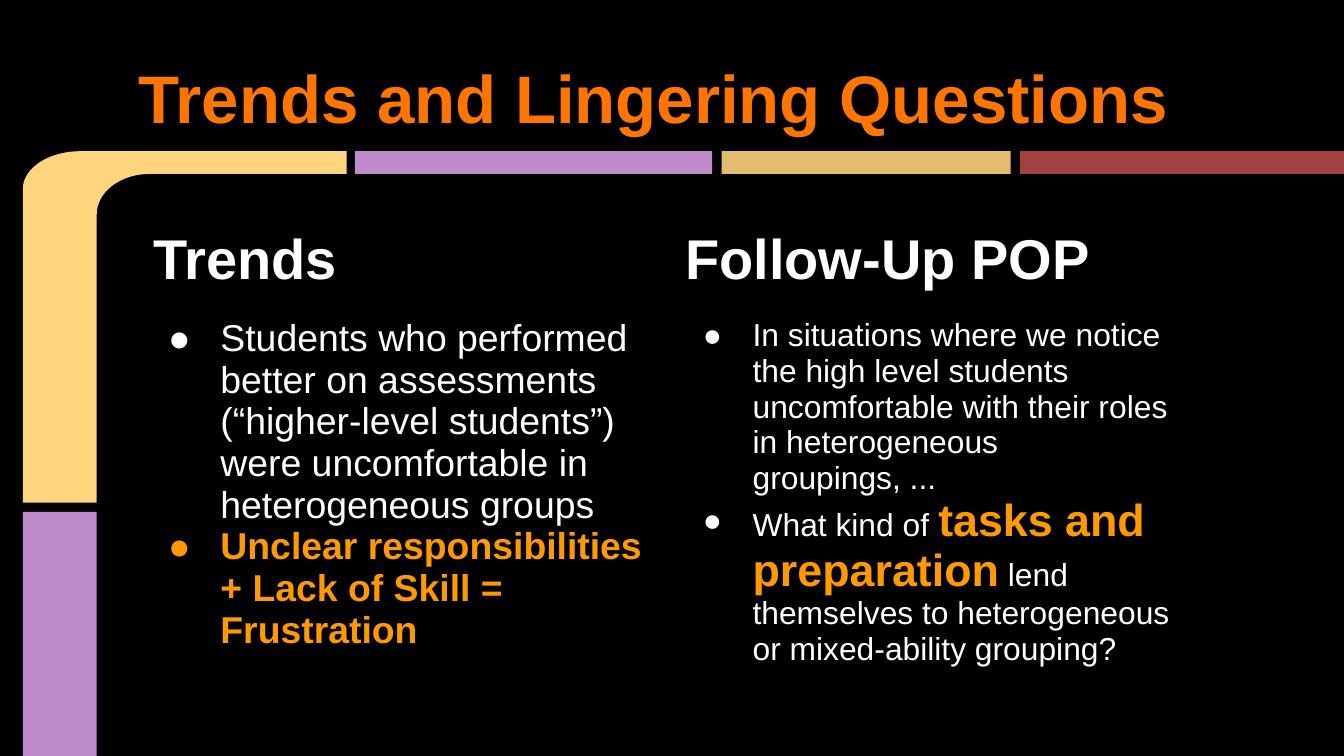
import math

from lxml import etree
from pptx import Presentation
from pptx import util as u
from pptx.dml.color import RGBColor
from pptx.enum import shapes, text
from pptx.oxml import ns

WIDTH = 10
HEIGHT = WIDTH * 9 / 16
FONT = "Arial"
BLACK, WHITE, ORANGE, AMBER = "000000", "FFFFFF", "FF7500", "FF9900"
GOLD, LILAC, SAND, BRICK = "FED47D", "BF8AC9", "E3BC6D", "A14141"

# Ribbon that runs down the left side and across below the title
LEFT, TOP = 0.17, HEIGHT / 5
BAND_WIDTH, BAND_HEIGHT = 0.55, 0.17
BARS = [(2.64, 2.66, LILAC), (5.37, 2.15, SAND), (7.59, 2.41, BRICK)]

# Table: a heading over bullets in each column; a span is (text, size, colour, bold)
HEADINGS = ["Trends", "Follow-Up POP"]
BULLETS = [
    [
        [("Students who performed better on assessments (“higher-level students”) "
          "were uncomfortable in heterogeneous groups", 20, WHITE, False)],
        [("Unclear responsibilities + Lack of Skill = Frustration", 20, AMBER, True)],
    ],
    [
        [("In situations where we notice the high level students uncomfortable with "
          "their roles in heterogeneous groupings, ...", 17, WHITE, False)],
        [("What kind of ", 17, WHITE, False),
         ("tasks and preparation", 24, AMBER, True),
         (" lend themselves to heterogeneous or mixed-ability grouping?", 17, WHITE, False)],
    ],
]
HANGS = [0.39, 0.37]


def color(value):
    return RGBColor.from_string(value)


def set_font(font, size, value, bold):
    font.name, font.size, font.bold = FONT, u.Pt(size), bold
    font.color.rgb = color(value)


def paint(shape, value):
    shape.shadow.inherit = False
    shape.fill.solid()
    shape.fill.fore_color.rgb = color(value)
    shape.line.fill.background()


def add_bar(page, left, top, width, height, value):
    bar = page.shapes.add_shape(shapes.MSO_SHAPE.RECTANGLE, *map(u.Inches, (left, top, width, height)))
    paint(bar, value)


def corner(left, top, width, height, steps=16):
    """Points of a rounded top-left corner, from its left end to its top end."""
    angles = [math.pi / 2 * step / steps for step in range(steps + 1)]
    return [(left + width * (1 - math.cos(a)), top + height * (1 - math.sin(a))) for a in angles]


def add_elbow(page):
    right, bottom = 2.58, 3.74
    inner_left, inner_top = LEFT + BAND_WIDTH, TOP + BAND_HEIGHT
    outer = corner(LEFT, TOP, 0.43, 0.28)
    inner = corner(inner_left, inner_top, 0.39, 0.3)
    outline = [(LEFT, bottom), *outer, (right, TOP), (right, inner_top), *reversed(inner), (inner_left, bottom)]
    points = [(u.Inches(x), u.Inches(y)) for x, y in outline]
    builder = page.shapes.build_freeform(*points[0])
    builder.add_line_segments(points[1:], close=True)
    paint(builder.convert_to_shape(), GOLD)


def add_title(page, words):
    title = page.shapes.title
    title.left, title.top, title.width, title.height = map(u.Inches, (0.93, 0.18, 8.56, 0.94))
    frame = title.text_frame
    frame.text = words
    frame.vertical_anchor = text.MSO_ANCHOR.BOTTOM
    frame.margin_left = frame.margin_right = frame.margin_top = frame.margin_bottom = u.Inches(0.1)
    para = frame.paragraphs[0]
    para.alignment = text.PP_ALIGN.LEFT
    set_font(para.font, 36, ORANGE, True)


def add_bullet(para, hang, value):
    props = para._p.get_or_add_pPr()
    props.set("marL", str(u.Inches(0.5)))
    props.set("indent", str(-u.Inches(hang)))
    tint = etree.SubElement(props, ns.qn("a:buClr"))
    etree.SubElement(tint, ns.qn("a:srgbClr"), val=value)
    etree.SubElement(props, ns.qn("a:buFont"), typeface=FONT)
    etree.SubElement(props, ns.qn("a:buChar"), char="●")


def format_cell(cell):
    cell.margin_left = cell.margin_right = cell.margin_top = cell.margin_bottom = u.Inches(0.1)
    props = cell._tc.get_or_add_tcPr()
    for side in ("lnL", "lnR", "lnT", "lnB"):
        border = etree.SubElement(props, ns.qn("a:" + side), w=str(u.Pt(0.75)))
        fill = etree.SubElement(border, ns.qn("a:solidFill"))
        etree.SubElement(fill, ns.qn("a:srgbClr"), val=BLACK)
    cell.fill.background()


def fill_bullets(cell, items, hang):
    frame = cell.text_frame
    for index, spans in enumerate(items):
        para = frame.add_paragraph() if index else frame.paragraphs[0]
        add_bullet(para, hang, spans[0][2])
        for words, *style in spans:
            span = para.add_run()
            span.text = words
            set_font(span.font, *style)


def add_columns(page):
    column_width, row_height = 3.96, 0.42
    frame = page.shapes.add_table(2, 2, *map(u.Inches, (1.04, 1.6, 2 * column_width, 2 * row_height)))
    table = frame.table
    table.first_row = table.horz_banding = False
    for column, heading in enumerate(HEADINGS):
        top, body = table.cell(0, column), table.cell(1, column)
        format_cell(top)
        format_cell(body)
        top.text = heading
        set_font(top.text_frame.paragraphs[0].font, 30, WHITE, True)
        fill_bullets(body, BULLETS[column], HANGS[column])


def main():
    deck = Presentation()
    deck.slide_width, deck.slide_height = u.Inches(WIDTH), u.Inches(HEIGHT)
    page = deck.slides.add_slide(deck.slide_layouts.get_by_name("Title Only"))
    page.background.fill.solid()
    page.background.fill.fore_color.rgb = color(BLACK)

    # Ribbon
    add_elbow(page)
    add_bar(page, LEFT, 3.81, BAND_WIDTH, HEIGHT - 3.81, LILAC)
    for left, width, value in BARS:
        add_bar(page, left, TOP, width, BAND_HEIGHT, value)

    # Title and two columns of text
    add_title(page, "Trends and Lingering Questions")
    add_columns(page)
    deck.save("out.pptx")


if __name__ == "__main__":
    main()
